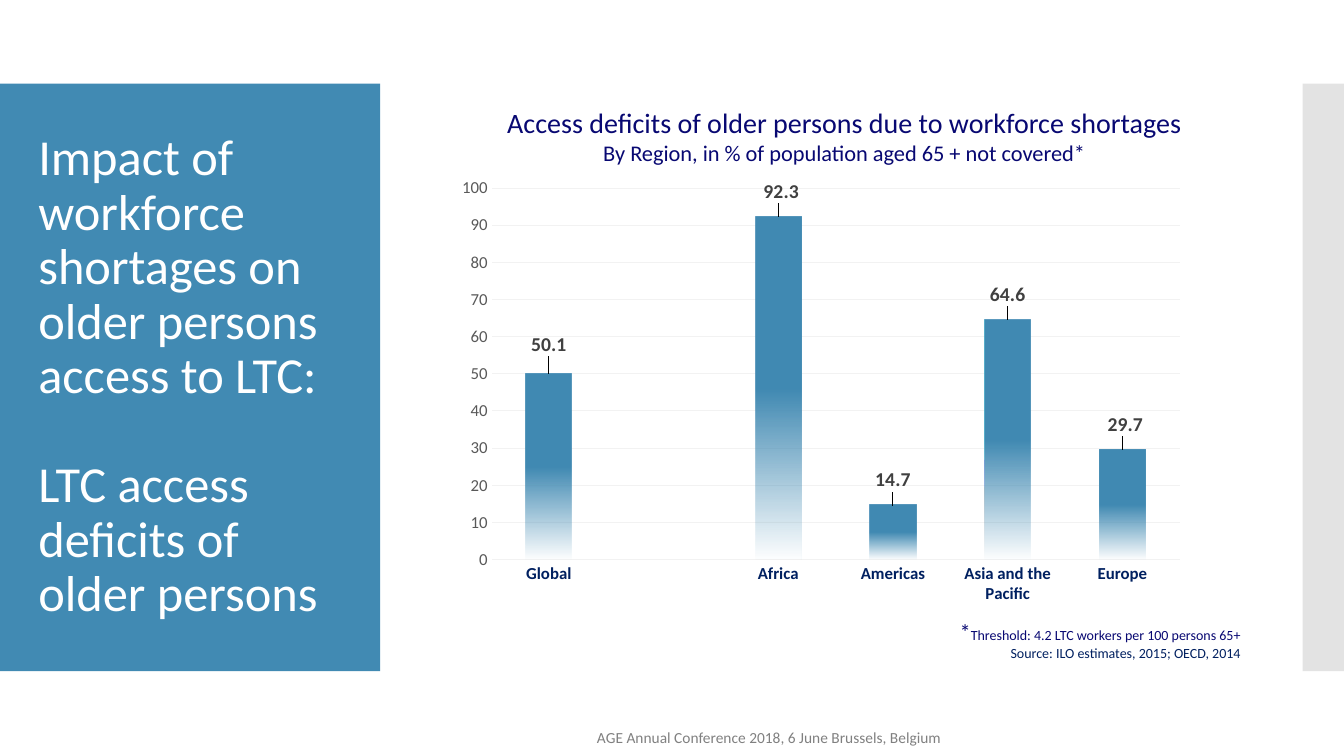
import pptx
import pptx.chart.data
import pptx.dml.color
import pptx.enum.chart
import pptx.enum.shapes
import pptx.enum.text
import pptx.oxml
import pptx.oxml.ns
import pptx.util

Inches = pptx.util.Inches
Pt = pptx.util.Pt
RGBColor = pptx.dml.color.RGBColor
ALIGN = pptx.enum.text.PP_ALIGN
ANCHOR = pptx.enum.text.MSO_ANCHOR
AUTO = pptx.enum.text.MSO_AUTO_SIZE

BLUE = RGBColor(0x41, 0x8A, 0xB3)
SILVER = RGBColor(0xC8, 0xC8, 0xC8)
INDIGO = RGBColor(0x08, 0x08, 0x72)
NAVY = RGBColor(0x00, 0x20, 0x60)
AXIS_GRAY = RGBColor(0x59, 0x59, 0x59)
LABEL_GRAY = RGBColor(0x40, 0x40, 0x40)
GRID_GRAY = RGBColor(0xF2, 0xF2, 0xF2)
FOOTER_GRAY = RGBColor(0x80, 0x80, 0x80)
WHITE = RGBColor(0xFF, 0xFF, 0xFF)

REGIONS = ["Global", "", "Africa", "Americas", "Asia and the Pacific", "Europe"]
DEFICITS = [50.1, None, 92.3, 14.7, 64.6, 29.7]
LABEL_SHIFTS = {0: (0, -0.03), 2: (0.004, -0.02), 3: (0, -0.02),
                4: (0, -0.02), 5: (0.004, -0.02)}


def style_font(font, size, color, bold=False):
    font.name = "Calibri"
    font.size = Pt(size)
    font.bold = bold
    font.color.rgb = color


def add_run(p, text, size, color):
    r = p.add_run()
    r.text = text
    style_font(r.font, size, color)
    return r


def set_alpha(color_element, percent):
    alpha = pptx.oxml.parse_xml(
        f'<a:alpha {pptx.oxml.ns.nsdecls("a")} val="{percent * 1000}"/>')
    color_element.append(alpha)


def add_panel(s, left, width, color, opacity=100):
    sp = s.shapes.add_shape(pptx.enum.shapes.MSO_SHAPE.RECTANGLE,
                            Inches(left), Inches(0.83), Inches(width), Inches(5.83))
    sp.shadow.inherit = False
    sp.line.fill.background()
    sp.fill.solid()
    sp.fill.fore_color.rgb = color
    if opacity < 100:
        set_alpha(sp.element.xpath("./p:spPr/a:solidFill/a:srgbClr")[0], opacity)


def add_text(s, box, paragraphs, wrap=True, auto_size=AUTO.SHAPE_TO_FIT_TEXT,
             anchor=ANCHOR.TOP):
    tf = s.shapes.add_textbox(*map(Inches, box)).text_frame
    tf.word_wrap = wrap
    tf.auto_size = auto_size
    tf.vertical_anchor = anchor
    for i, (align, runs) in enumerate(paragraphs):
        p = tf.add_paragraph() if i else tf.paragraphs[0]
        p.alignment = align
        for text, size, color in runs:
            add_run(p, text, size, color)


def set_title(s, paragraphs):
    title = s.shapes.title
    title.element.getparent().append(title.element)
    title.left, title.top = Inches(0.28), Inches(1.23)
    title.width, title.height = Inches(3.22), Inches(5.03)
    tf = title.text_frame
    tf.word_wrap = True
    tf.auto_size = AUTO.NONE
    tf.vertical_anchor = ANCHOR.MIDDLE
    for i, lines in enumerate(paragraphs):
        p = tf.add_paragraph() if i else tf.paragraphs[0]
        p.alignment = ALIGN.LEFT
        p.line_spacing = 0.9
        p.space_before = Pt(39 if i else 0)
        for j, line in enumerate(lines):
            if j:
                p.add_line_break()
            r = add_run(p, line, 36, WHITE)
            r.font.element.set("spc", "-60") if hasattr(r.font, "element") else None


def manual_layout(x, y, w=None, h=None):
    inner = w is not None
    parts = ['<c:layoutTarget val="inner"/><c:xMode val="edge"/><c:yMode val="edge"/>'
             if inner else ""]
    sizes = [("x", x), ("y", y)] + ([("w", w), ("h", h)] if inner else [])
    parts += [f'<c:{tag} val="{value}"/>' for tag, value in sizes]
    return pptx.oxml.parse_xml(
        f'<c:layout {pptx.oxml.ns.nsdecls("c")}><c:manualLayout>{"".join(parts)}'
        '</c:manualLayout></c:layout>')


def style_axis(axis, color, bold=False):
    axis.major_tick_mark = pptx.enum.chart.XL_TICK_MARK.NONE
    axis.minor_tick_mark = pptx.enum.chart.XL_TICK_MARK.NONE
    axis.format.line.fill.background()
    style_font(axis.tick_labels.font, 12, color, bold)


def style_bars(chart, series):
    fill = series.format.fill
    fill.gradient()
    fill.gradient_angle = 270
    for stop, position in zip(fill.gradient_stops, (0.5, 1)):
        stop.position = position
        stop.color.rgb = BLUE
    set_alpha(chart.element.xpath(".//c:ser/c:spPr//a:gs/a:srgbClr")[-1], 0)


def add_deficit_chart(s):
    data = pptx.chart.data.CategoryChartData()
    data.categories = REGIONS
    data.add_series("Series 1", DEFICITS)
    chart = s.shapes.add_chart(
        pptx.enum.chart.XL_CHART_TYPE.COLUMN_CLUSTERED,
        Inches(4.43), Inches(1.69), Inches(7.42), Inches(4.39), data).chart
    chart.has_legend = False
    chart.has_title = False
    chart.font.name = "Calibri"
    chart.font.size = Pt(10)

    style_axis(chart.category_axis, NAVY, True)
    values = chart.value_axis
    style_axis(values, AXIS_GRAY)
    values.minimum_scale, values.maximum_scale, values.major_unit = 0, 100, 10
    values.has_major_gridlines = True
    values.major_gridlines.format.line.color.rgb = GRID_GRAY
    values.major_gridlines.format.line.width = Pt(0.75)

    plot = chart.plots[0]
    plot.vary_by_categories = False
    plot.gap_width = 150
    series = plot.series[0]
    style_bars(chart, series)
    series.data_labels.show_value = True
    style_font(series.data_labels.font, 14, LABEL_GRAY, True)
    for i, shift in LABEL_SHIFTS.items():
        label = series.points[i].data_label
        label.position = pptx.enum.chart.XL_LABEL_POSITION.OUTSIDE_END
        style_font(label.font, 14, LABEL_GRAY, True)
        idx = chart.element.xpath(f".//c:dLbl/c:idx[@val='{i}']")[0]
        idx.addnext(manual_layout(*shift))

    area = chart.element.xpath(".//c:plotArea")[0]
    for layout in area.xpath("./c:layout"):
        area.remove(layout)
    area.insert(0, manual_layout(0.06, 0.04, 0.92, 0.84))


def main():
    prs = pptx.Presentation()
    prs.slide_width, prs.slide_height = Inches(13.33), Inches(7.5)
    s = prs.slides.add_slide(prs.slide_layouts[5])

    add_panel(s, 0, 3.77, BLUE)
    add_panel(s, 12.92, 0.41, SILVER, 50)
    add_deficit_chart(s)
    add_text(s, (4.52, 1, 7.71, 0.71), [
        (ALIGN.CENTER, [("Access deficits of older persons due to workforce shortages",
                         20, INDIGO)]),
        (ALIGN.CENTER, [("By Region, in % of population aged 65 + not covered*",
                         16, INDIGO)])])
    add_text(s, (9.42, 6.08, 3.11, 0.54), [
        (ALIGN.LEFT, [("*", 16, INDIGO),
                      ("Threshold: 4.2 LTC workers per 100 persons 65+", 10, INDIGO)]),
        (ALIGN.RIGHT, [("Source: ILO estimates, 2015; OECD, 2014", 10, NAVY)])],
        wrap=False)
    set_title(s, [
        ["Impact of", "workforce shortages on older persons access to LTC:"],
        ["LTC access deficits of older persons"]])
    add_text(s, (4.4, 7.12, 6.46, 0.4), [
        (ALIGN.CENTER, [("AGE Annual Conference 2018, 6 June Brussels, Belgium",
                         11, FOOTER_GRAY)])],
        auto_size=AUTO.NONE, anchor=ANCHOR.MIDDLE)
    prs.save("out.pptx")


if __name__ == "__main__":
    main()
